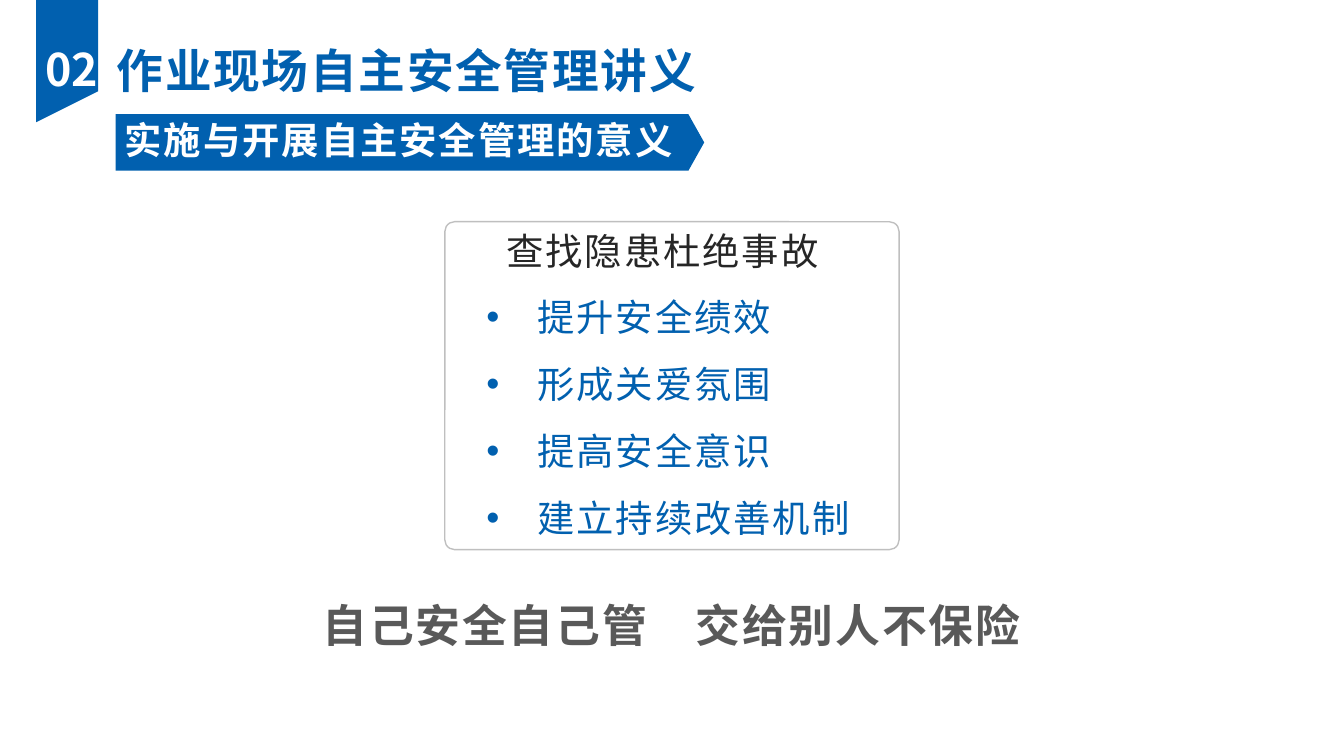
from lxml.etree import SubElement
from pptx import Presentation
from pptx.dml.color import RGBColor
from pptx.enum.shapes import MSO_SHAPE
from pptx.enum.text import MSO_AUTO_SIZE, PP_ALIGN
from pptx.oxml.ns import qn
from pptx.util import Inches, Pt

FONT = "Noto Sans CJK SC"
COLORS = {
    "blue": "0160AF",
    "white": "FFFFFF",
    "dark": "262626",
    "gray": "595959",
    "border": "BFBFBF",
}
BENEFITS = ["提升安全绩效", "形成关爱氛围", "提高安全意识", "建立持续改善机制"]


def rgb(name):
    return RGBColor.from_string(COLORS[name])


def paint(shape, fill=None, line=None):
    shape.shadow.inherit = False
    if fill:
        shape.fill.solid()
        shape.fill.fore_color.rgb = rgb(fill)
    else:
        shape.fill.background()
    if line:
        shape.line.color.rgb = rgb(line)
        shape.line.width = Pt(0.75)
    else:
        shape.line.fill.background()


def add_preset(slide, preset, box, corner, fill=None, line=None):
    shape = slide.shapes.add_shape(preset, *map(Inches, box))
    shape.adjustments[0] = corner
    paint(shape, fill, line)


def add_ribbon(slide):
    """Hanging bookmark with a slanted lower edge, behind the section number."""
    left, right, top = 0.27, 0.73, -0.02
    corners = [(right, top), (right, 0.68), (left, 0.91)]
    builder = slide.shapes.build_freeform(Inches(left), Inches(top))
    builder.add_line_segments([(Inches(x), Inches(y)) for x, y in corners])
    paint(builder.convert_to_shape(), "blue")


def add_bullet(paragraph):
    paragraph.line_spacing = 1.5
    properties = paragraph._p.get_or_add_pPr()
    properties.set("marL", str(Inches(0.38)))
    properties.set("indent", str(Inches(-0.38)))
    SubElement(properties, qn("a:buFont"), typeface="Arial")
    SubElement(properties, qn("a:buChar"), char="•")


def add_text(slide, lines, box, size, color, bold=False, spacing=1,
             align=PP_ALIGN.LEFT, wrap=True, bullets=False):
    frame = slide.shapes.add_textbox(*map(Inches, box)).text_frame
    frame.word_wrap = wrap
    frame.auto_size = MSO_AUTO_SIZE.SHAPE_TO_FIT_TEXT
    for index, line in enumerate(lines):
        paragraph = frame.add_paragraph() if index else frame.paragraphs[0]
        paragraph.alignment = align
        if bullets:
            add_bullet(paragraph)
        run = paragraph.add_run()
        run.text = line
        run.font.size = Pt(size)
        run.font.bold = bold
        run.font.color.rgb = rgb(color)
        run.font.name = FONT
        properties = run._r.get_or_add_rPr()
        properties.set("spc", str(spacing * 100))
        SubElement(properties, qn("a:ea"), typeface=FONT)


def add_heading(slide):
    add_text(slide, ["作业现场自主安全管理讲义"], (0.76, 0.26, 4.53, 0.52), 25,
             "blue", bold=True, align=PP_ALIGN.CENTER, wrap=False)
    add_ribbon(slide)
    add_text(slide, ["02"], (0.18, 0.26, 0.71, 0.5), 24, "white",
             bold=True, spacing=0, align=PP_ALIGN.CENTER)
    add_preset(slide, MSO_SHAPE.PENTAGON, (0.86, 0.85, 4.38, 0.42), 0.28,
               fill="blue")
    add_text(slide, ["实施与开展自主安全管理的意义"], (0.83, 0.82, 4.35, 0.44),
             20, "white", bold=True)


def add_benefits(slide):
    add_text(slide, ["查找隐患杜绝事故"], (3.67, 1.65, 2.55, 0.44), 20, "dark")
    add_text(slide, BENEFITS, (3.52, 1.97, 2.95, 2.12), 20, "blue",
             bullets=True)
    add_text(slide, ["自己安全自己管　交给别人不保险"], (2.24, 4.4, 5.51, 0.5),
             24, "gray", bold=True, align=PP_ALIGN.CENTER, wrap=False)
    add_preset(slide, MSO_SHAPE.ROUNDED_RECTANGLE, (3.31, 1.65, 3.38, 2.44),
               0.03, line="border")


def main():
    presentation = Presentation()
    presentation.slide_width = Inches(10)
    presentation.slide_height = Inches(10 * 9 / 16)
    slide = presentation.slides.add_slide(presentation.slide_layouts[6])
    add_heading(slide)
    add_benefits(slide)
    presentation.save("out.pptx")


if __name__ == "__main__":
    main()
